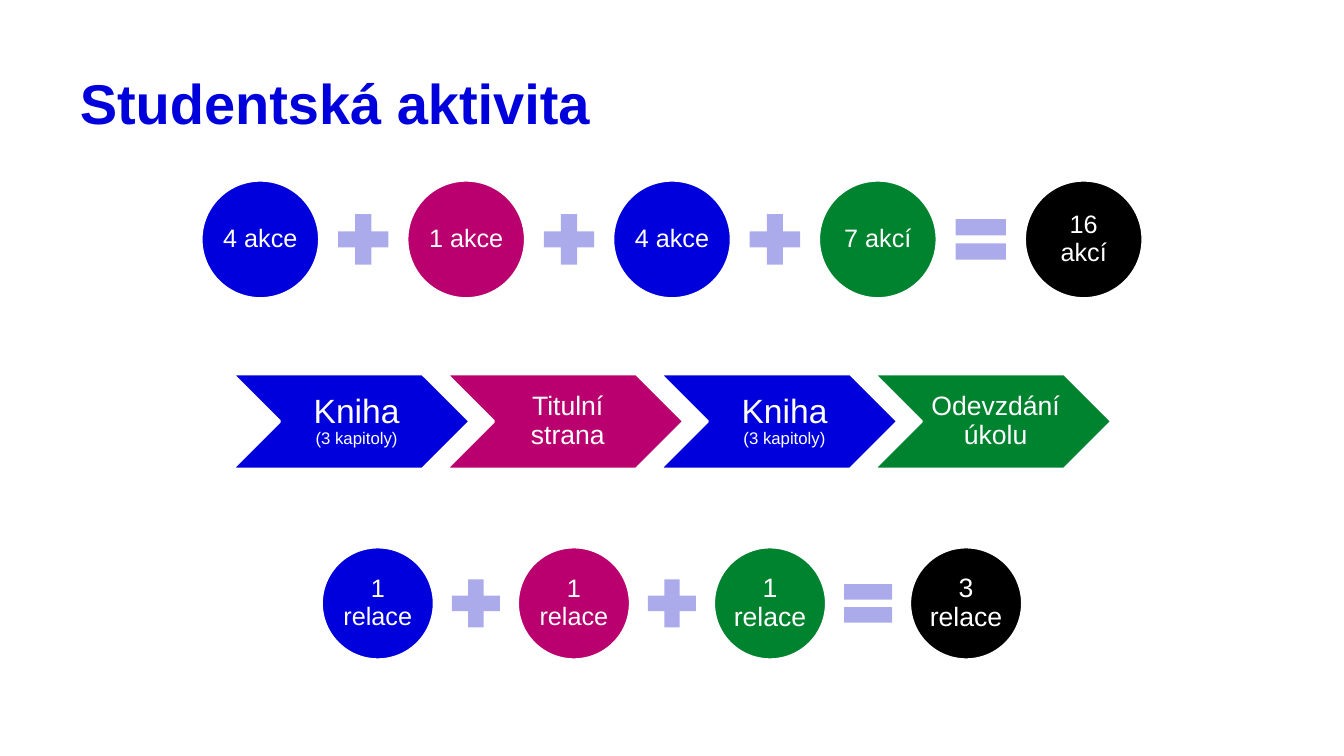
from pptx import Presentation
from pptx.dml.color import RGBColor
from pptx.enum import shapes, text
from pptx.util import Pt

BLUE = RGBColor(0x00, 0x00, 0xDC)
MAGENTA = RGBColor(0xB9, 0x00, 0x6E)
GREEN = RGBColor(0x00, 0x83, 0x2F)
BLACK = RGBColor(0x00, 0x00, 0x00)
WHITE = RGBColor(0xFF, 0xFF, 0xFF)
LAVENDER = RGBColor(0xAB, 0xAB, 0xEB)
FONT = "Arial"

TITLE = "Studentská aktivita"
# Each item: wording, fill, font size of each line
ACTIONS = [
    ("4 akce", BLUE, [18]),
    ("1 akce", MAGENTA, [18]),
    ("4 akce", BLUE, [18]),
    ("7 akcí", GREEN, [18]),
    ("16 akcí", BLACK, [18]),
]
STEPS = [
    ("Kniha\v(3 kapitoly)", BLUE, [24, 12]),
    ("Titulní strana", MAGENTA, [19]),
    ("Kniha\v(3 kapitoly)", BLUE, [24, 12]),
    ("Odevzdání úkolu", GREEN, [19]),
]
SESSIONS = [
    ("1 relace", BLUE, [18]),
    ("1 relace", MAGENTA, [18]),
    ("1 relace", GREEN, [19]),
    ("3 relace", BLACK, [19]),
]

SLIDE_WIDTH, SLIDE_HEIGHT = 960, 540
ACTIONS_MIDDLE, ROW_PITCH = 171, 130
STEP_WIDTH, STEP_HEIGHT = 169.8, 67.9
SYMBOL_RATIO, GAP_RATIO = 0.58, 0.08  # shares of the circle diameter


def add_filled(slide, kind, center_x, center_y, width, height, color):
    shape = slide.shapes.add_shape(
        kind, Pt(center_x - width / 2), Pt(center_y - height / 2), Pt(width), Pt(height))
    shape.shadow.inherit = False
    shape.fill.solid()
    shape.fill.fore_color.rgb = color
    shape.line.fill.background()
    return shape


def set_margins(frame, left, others):
    frame.margin_left = Pt(left)
    frame.margin_top = frame.margin_right = frame.margin_bottom = Pt(others)


def add_labelled(slide, kind, center_x, center_y, width, height, item, margins):
    label, color, sizes = item
    shape = add_filled(slide, kind, center_x, center_y, width, height, color)
    shape.line.color.rgb = WHITE
    shape.line.width = Pt(2)
    frame = shape.text_frame
    frame.word_wrap = True
    frame.vertical_anchor = text.MSO_ANCHOR.MIDDLE
    set_margins(frame, *margins)
    paragraph = frame.paragraphs[0]
    paragraph.text = label
    paragraph.alignment = text.PP_ALIGN.CENTER
    paragraph.line_spacing = 0.9
    for run, size in zip(paragraph.runs, sizes):
        run.font.name = FONT
        run.font.size = Pt(size)
        run.font.color.rgb = WHITE


def row_centers(count, pitch):
    """Return the x centres of items spread evenly about the slide's middle."""
    return [SLIDE_WIDTH / 2 + (i - (count - 1) / 2) * pitch for i in range(count)]


def add_sum(slide, items, middle, diameter):
    """Draw a row of circles joined by plus signs, with an equals sign before the last."""
    pitch = diameter * (1 + SYMBOL_RATIO + 2 * GAP_RATIO)
    symbol_size = diameter * SYMBOL_RATIO
    last = len(items) - 1
    for i, (item, x) in enumerate(zip(items, row_centers(len(items), pitch))):
        if i:
            kind = shapes.MSO_SHAPE.MATH_EQUAL if i == last else shapes.MSO_SHAPE.MATH_PLUS
            add_filled(slide, kind, x - pitch / 2, middle, symbol_size, symbol_size, LAVENDER)
        add_labelled(slide, shapes.MSO_SHAPE.OVAL, x, middle, diameter, diameter, item, (2, 2))


def add_steps(slide, items, middle):
    for item, x in zip(items, row_centers(len(items), STEP_WIDTH * 0.9)):
        margins = (12, 4) if len(item[2]) > 1 else (6, 2)
        add_labelled(slide, shapes.MSO_SHAPE.CHEVRON, x, middle,
                     STEP_WIDTH, STEP_HEIGHT, item, margins)


def add_title(slide):
    frame = slide.shapes.add_textbox(Pt(57), Pt(57), Pt(846.5), Pt(35.5)).text_frame
    frame.word_wrap = True
    set_margins(frame, 0, 0)
    frame.text = TITLE
    paragraph = frame.paragraphs[0]
    paragraph.line_spacing = Pt(40)
    font = paragraph.runs[0].font
    font.name, font.size, font.bold = FONT, Pt(40), True
    font.color.rgb = BLUE


def main():
    presentation = Presentation()
    presentation.slide_width = Pt(SLIDE_WIDTH)
    presentation.slide_height = Pt(SLIDE_HEIGHT)
    slide = presentation.slides.add_slide(presentation.slide_layouts[6])
    add_title(slide)
    add_sum(slide, ACTIONS, ACTIONS_MIDDLE, 84.5)
    add_steps(slide, STEPS, ACTIONS_MIDDLE + ROW_PITCH)
    add_sum(slide, SESSIONS, ACTIONS_MIDDLE + 2 * ROW_PITCH, 80.5)
    presentation.save("out.pptx")


if __name__ == "__main__":
    main()
